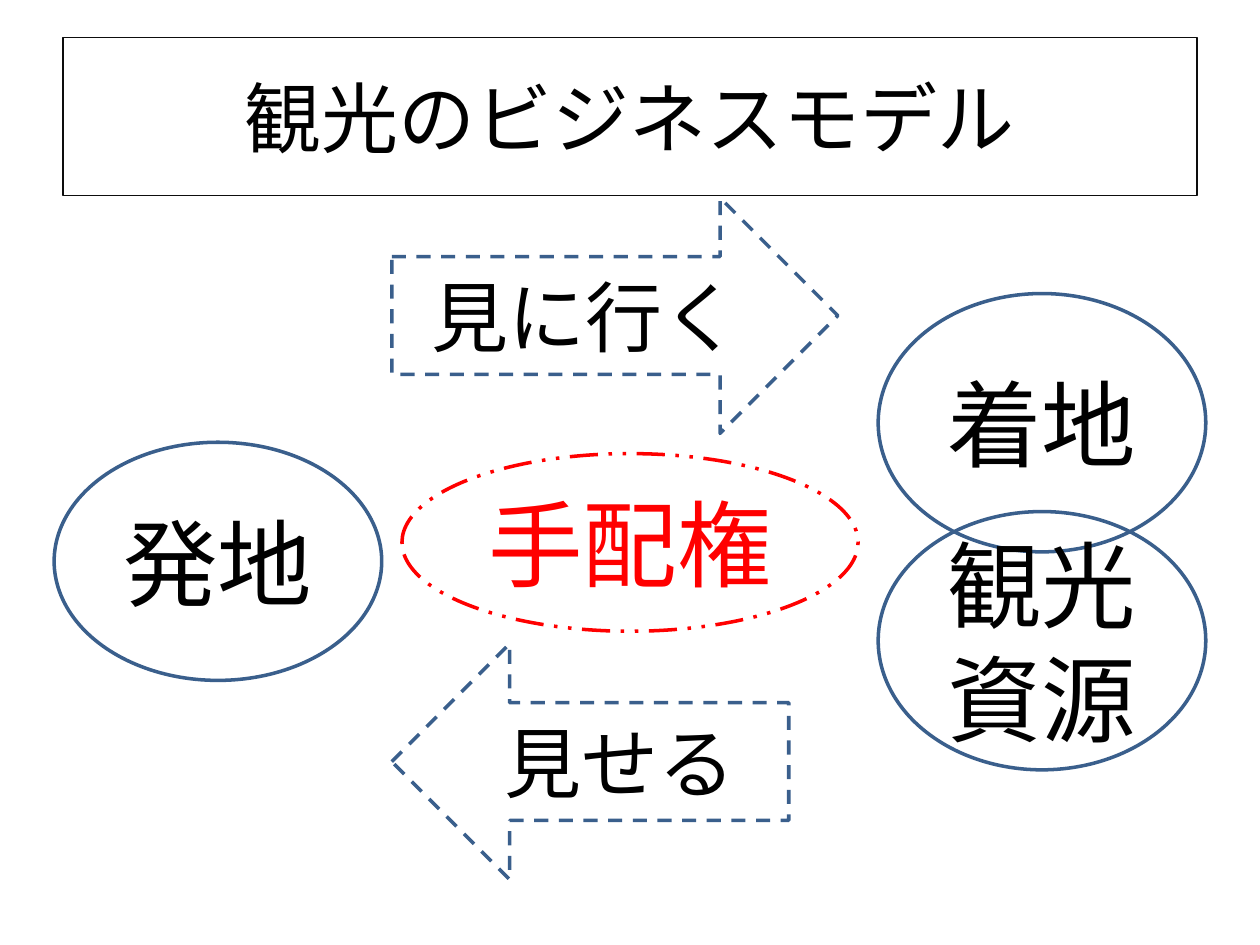
from pptx import Presentation
from pptx import util as u
from pptx.dml.color import RGBColor
from pptx.enum import dml, shapes, text

BLACK, BLUE, RED = "000000", "3A5F8C", "FF0000"
KIND = shapes.MSO_SHAPE
DASH = dml.MSO_LINE


def color(value):
    return RGBColor.from_string(value)


def add_figure(slide, kind, box, label, size, line=BLUE, width=2, dash=None, ink=BLACK):
    """Outlined shape with a centred label, filling box (left, top, width, height)."""
    figure = slide.shapes.add_shape(kind, *(u.Inches(length) for length in box))
    figure.shadow.inherit = False
    figure.fill.background()
    figure.line.color.rgb = color(line)
    figure.line.width = u.Pt(width)
    if dash is not None:
        figure.line.dash_style = dash

    frame = figure.text_frame
    frame.word_wrap = True
    frame.vertical_anchor = text.MSO_ANCHOR.MIDDLE
    frame.text = label
    para = frame.paragraphs[0]
    para.alignment = text.PP_ALIGN.CENTER
    font = para.runs[0].font
    font.name = "Calibri"
    font.size = u.Pt(size)
    font.color.rgb = color(ink)


def add_title(slide, box):
    add_figure(slide, KIND.RECTANGLE, box, "観光のビジネスモデル", 44, line="0D0D0D", width=0.75)


def add_model(slide, box):
    left, top, width, height = box
    place_width, place_height = 2.6, 2.05
    arrow_left, arrow_height = left + 2.68, 1.87
    right = left + width - place_width

    # Origin on the left, destination and its resources on the right
    places = [
        ("発地", left, top + 1.94, 1.89),
        ("着地", right, top + 0.76, place_height),
        ("観光資源", right, top + 2.49, place_height),
    ]
    for label, x, y, tall in places:
        add_figure(slide, KIND.OVAL, (x, y, place_width, tall), label, 54)

    # Arrows along the top and bottom edges
    arrows = [
        (KIND.RIGHT_ARROW, "見に行く", top, 3.54),
        (KIND.LEFT_ARROW, "見せる", top + height - arrow_height, 3.15),
    ]
    for kind, label, y, wide in arrows:
        add_figure(slide, kind, (arrow_left, y, wide, arrow_height), label, 44, dash=DASH.DASH)

    # Booking rights in the centre
    add_figure(slide, KIND.OVAL, (left + 2.76, top + 2.03, 3.62, 1.41), "手配権", 54,
               line=RED, dash=DASH.DASH_DOT_DOT, ink=RED)


def main():
    deck = Presentation()
    deck.slide_width, deck.slide_height = u.Inches(10), u.Inches(7.5)
    slide = deck.slides.add_slide(deck.slide_layouts[6])
    add_title(slide, (0.5, 0.3, 9, 1.25))
    add_model(slide, (0.43, 1.57, 9.14, 5.41))
    deck.save("out.pptx")


if __name__ == "__main__":
    main()
